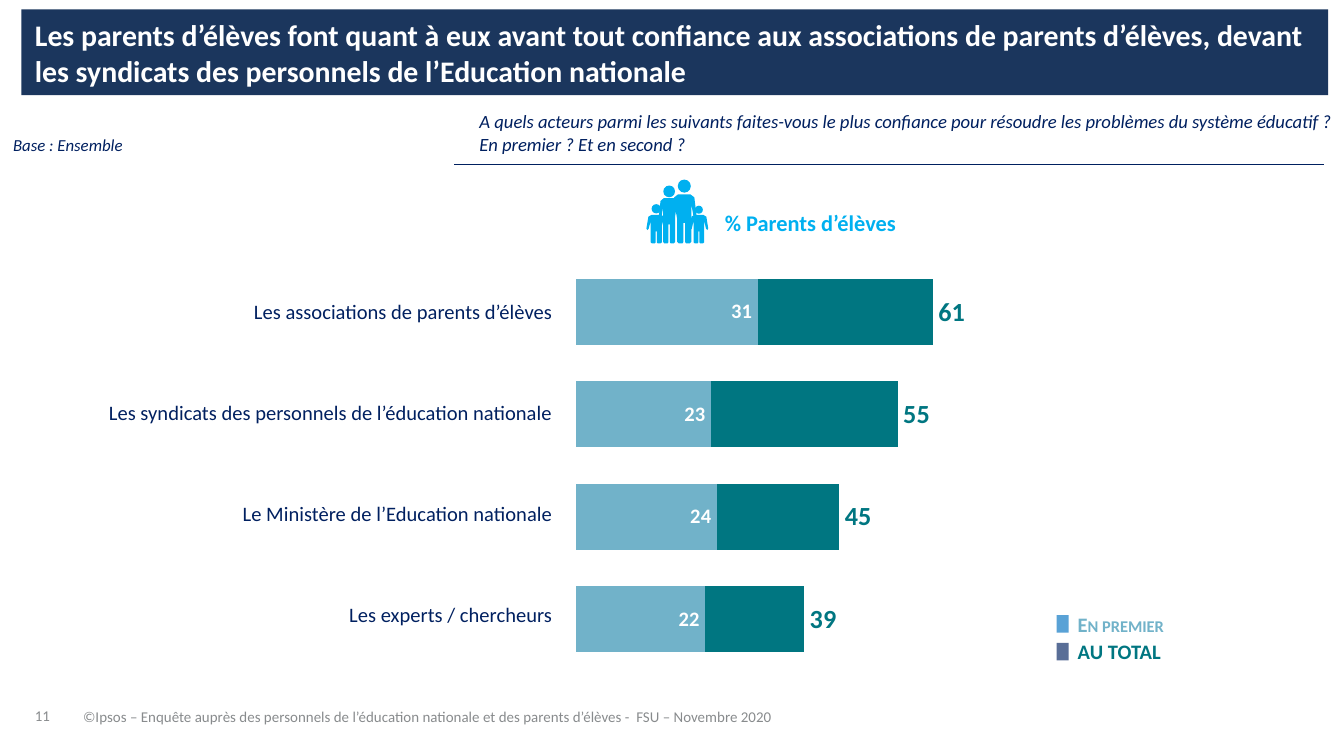
from dataclasses import dataclass

import pptx
import pptx.chart.data
import pptx.dml.color
import pptx.enum.chart
import pptx.enum.shapes
import pptx.enum.text
import pptx.oxml
import pptx.oxml.ns
import pptx.util
from pptx.util import Pt

RGBColor = pptx.dml.color.RGBColor
Align = pptx.enum.text.PP_ALIGN
Anchor = pptx.enum.text.MSO_ANCHOR
Preset = pptx.enum.shapes.MSO_SHAPE
LabelPosition = pptx.enum.chart.XL_LABEL_POSITION

FONT = "Calibri"
WHITE = RGBColor(0xFF, 0xFF, 0xFF)
NAVY = RGBColor(0x00, 0x20, 0x60)
BANNER = RGBColor(0x1B, 0x36, 0x5D)
GREY = RGBColor(0x88, 0x8B, 0x8D)
LIGHT_BLUE = RGBColor(0x71, 0xB2, 0xC9)
TEAL = RGBColor(0x00, 0x76, 0x81)
SKY = RGBColor(0x00, 0xB0, 0xF0)
KEY_BLUE = RGBColor(0x59, 0xA2, 0xD6)
KEY_SLATE = RGBColor(0x59, 0x6E, 0x97)

TITLE = ("Les parents d’élèves font quant à eux avant tout confiance aux associations de "
         "parents d’élèves, devant les syndicats des personnels de l’Education nationale")
QUESTION = ("A quels acteurs parmi les suivants faites-vous le plus confiance pour résoudre "
            "les problèmes du système éducatif ? En premier ? Et en second ?")
SOURCE = ("©Ipsos – Enquête auprès des personnels de l’éducation nationale et des parents "
          "d’élèves -  FSU – Novembre 2020")


@dataclass(frozen=True)
class Label:
    text: str
    box: tuple[float, float, float, float]
    size: float
    color: RGBColor
    bold: bool = False
    italic: bool = False
    small_caps: bool = False
    inset: bool = True
    align: Align = Align.LEFT
    anchor: Anchor = Anchor.TOP
    line_spacing: float = 1.0


@dataclass(frozen=True)
class Actor:
    name: str
    first: int
    second: int
    total: int


@dataclass(frozen=True)
class LegendKey:
    text: str
    top: float
    key_color: RGBColor
    text_color: RGBColor
    small_caps: bool


@dataclass(frozen=True)
class Person:
    center: float
    head_top: float
    head_size: float
    shoulder: float
    width: float


ACTORS = [
    Actor("Les associations de parents d’élèves", 31, 30, 61),
    Actor("Les syndicats des personnels de l’éducation nationale", 23, 32, 55),
    Actor("Le Ministère de l’Education nationale", 24, 21, 45),
    Actor("Les experts / chercheurs", 22, 17, 39),
]
LABELS = [
    Label("11", (18.7, 369.4, 24.5, 18.7), 8, GREY, inset=False, anchor=Anchor.BOTTOM,
          line_spacing=0.85),
    Label(SOURCE, (37.4, 373, 502.6, 21.6), 8, GREY, anchor=Anchor.MIDDLE),
    Label(QUESTION, (249.8, 53.3, 476, 35.3), 10, NAVY, italic=True, anchor=Anchor.MIDDLE),
    Label("Base : Ensemble", (7, 72, 85, 10.8), 9, NAVY, italic=True, inset=False),
    Label("% Parents d’élèves", (369.4, 108.7, 129.6, 21.6), 12, SKY, bold=True,
          align=Align.CENTER),
]
LEGEND = [
    LegendKey("En premier", 327.6, KEY_BLUE, LIGHT_BLUE, True),
    LegendKey("AU TOTAL", 342.5, KEY_SLATE, TEAL, False),
]
FAMILY = [
    Person(366.6, 96.2, 7, 104.2, 13.5),
    Person(358.5, 99.4, 6.3, 106.2, 11.5),
    Person(351.6, 109.4, 5, 115.2, 10.6),
    Person(374.4, 110.2, 4.3, 115.2, 10),
]
FEET = 130.4
# Right half of a standing body: share of its width from the axis, share of its height
HALF_BODY = [(0.25, 0), (0.4, 0.06), (0.5, 0.48), (0.45, 0.53), (0.38, 0.48), (0.28, 0.2),
             (0.28, 0.97), (0.22, 1), (0.07, 1), (0.03, 0.97), (0.03, 0.58)]


def style_font(font, size: float, color: RGBColor, bold: bool = False,
               italic: bool = False) -> None:
    font.name, font.size, font.bold, font.italic = FONT, Pt(size), bold, italic
    font.color.rgb = color


def add_label(slide, label: Label) -> None:
    frame = slide.shapes.add_textbox(*map(Pt, label.box)).text_frame
    frame.word_wrap = True
    frame.vertical_anchor = label.anchor
    if not label.inset:
        frame.margin_left = frame.margin_right = frame.margin_top = frame.margin_bottom = 0
    paragraph = frame.paragraphs[0]
    paragraph.text = label.text
    paragraph.alignment = label.align
    paragraph.line_spacing = label.line_spacing
    style_font(paragraph.font, label.size, label.color, label.bold, label.italic)
    if label.small_caps:
        paragraph.font._element.set("cap", "small")


def paint(shape, color: RGBColor) -> None:
    shape.shadow.inherit = False
    shape.fill.solid()
    shape.fill.fore_color.rgb = color
    shape.line.fill.background()


def add_title(slide) -> None:
    title = slide.shapes.title
    title.left, title.top, title.width, title.height = map(Pt, (11.5, 5, 700, 46))
    title.fill.solid()
    title.fill.fore_color.rgb = BANNER
    title.text_frame.vertical_anchor = Anchor.MIDDLE
    title.text_frame.auto_size = pptx.enum.text.MSO_AUTO_SIZE.NONE
    paragraph = title.text_frame.paragraphs[0]
    paragraph.text = TITLE
    paragraph.alignment = Align.LEFT
    style_font(paragraph.font, 16, WHITE, bold=True)


def add_rule(slide) -> None:
    rule = slide.shapes.add_connector(pptx.enum.shapes.MSO_CONNECTOR.STRAIGHT,
                                      Pt(243.4), Pt(88), Pt(709.2), Pt(88))
    rule.line.color.rgb = NAVY
    rule.line.width = Pt(0.5)
    rule._element.spPr.append(pptx.oxml.parse_xml(
        f'<a:effectLst {pptx.oxml.ns.nsdecls("a")}/>'))


def add_actor_table(slide) -> None:
    table = slide.shapes.add_table(len(ACTORS), 1, Pt(21.6), Pt(139.7), Pt(275),
                                   Pt(216.8)).table
    table.first_row = table.horz_banding = False
    for row, actor in enumerate(ACTORS):
        cell = table.cell(row, 0)
        cell.fill.background()
        cell.vertical_anchor = Anchor.MIDDLE
        cell.margin_left = cell.margin_right = cell.margin_top = Pt(0.7)
        cell.margin_bottom = 0
        paragraph = cell.text_frame.paragraphs[0]
        paragraph.text = actor.name
        paragraph.alignment = Align.RIGHT
        style_font(paragraph.font, 11, NAVY)


def label_series(series, position: LabelPosition, size: float, color: RGBColor) -> None:
    labels = series.data_labels
    labels.show_value = True
    labels.position = position
    style_font(labels.font, size, color, bold=True)


def add_trust_chart(slide) -> None:
    data = pptx.chart.data.CategoryChartData()
    data.categories = [actor.name for actor in ACTORS]
    data.add_series("En premier", [actor.first for actor in ACTORS])
    data.add_series("En second", [actor.second for actor in ACTORS])
    data.add_series("Au total", [actor.total for actor in ACTORS])
    chart = slide.shapes.add_chart(pptx.enum.chart.XL_CHART_TYPE.BAR_STACKED, Pt(303.8),
                                   Pt(139.7), Pt(252), Pt(244), data).chart
    chart.has_legend = chart.has_title = False
    chart.font.name, chart.font.size = FONT, Pt(18)
    chart.category_axis.reverse_order = True
    axis = chart.value_axis
    axis.minimum_scale, axis.maximum_scale, axis.major_unit = 0, 70, 5
    axis.has_major_gridlines = False
    chart.category_axis.visible = axis.visible = False
    plot = chart.plots[0]
    plot.gap_width, plot.overlap, plot.vary_by_categories = 55, 100, False
    first, second, total = plot.series
    for series, color in ((first, LIGHT_BLUE), (second, TEAL)):
        series.format.fill.solid()
        series.format.fill.fore_color.rgb = color
    total.format.fill.background()
    label_series(first, LabelPosition.INSIDE_END, 11, WHITE)
    label_series(total, LabelPosition.INSIDE_BASE, 14, TEAL)
    set_plot_area(chart, x=0.02, y=0, w=0.87, h=0.9)


def set_plot_area(chart, **shares: float) -> None:
    """Fix the inner plot area as shares of the chart's width and height."""
    area = chart._chartSpace.chart.plotArea
    for layout in area.findall(pptx.oxml.ns.qn("c:layout")):
        area.remove(layout)
    sizes = "".join(f'<c:{name} val="{share}"/>' for name, share in shares.items())
    area.insert(0, pptx.oxml.parse_xml(
        f'<c:layout {pptx.oxml.ns.nsdecls("c")}><c:manualLayout><c:layoutTarget val="inner"/>'
        f'<c:xMode val="edge"/><c:yMode val="edge"/>{sizes}</c:manualLayout></c:layout>'))


def add_legend_key(slide, key: LegendKey) -> None:
    square = slide.shapes.add_shape(Preset.RECTANGLE, Pt(566), Pt(key.top + 2), Pt(6.5), Pt(9.4))
    paint(square, key.key_color)
    add_label(slide, Label(key.text, (577.4, key.top, 67.7, 13.7), 11, key.text_color, bold=True,
                           small_caps=key.small_caps, inset=False))


def add_person(slide, person: Person) -> None:
    outline = HALF_BODY + [(-x, y) for x, y in reversed(HALF_BODY)]
    height = FEET - person.shoulder
    points = [(Pt(person.center + x * person.width), Pt(person.shoulder + y * height))
              for x, y in outline]
    builder = slide.shapes.build_freeform(*points[0], scale=1.0)
    builder.add_line_segments(points[1:], close=True)
    paint(builder.convert_to_shape(), SKY)
    head = slide.shapes.add_shape(Preset.OVAL, Pt(person.center - person.head_size / 2),
                                  Pt(person.head_top), Pt(person.head_size), Pt(person.head_size))
    paint(head, SKY)


def main() -> None:
    presentation = pptx.Presentation()
    presentation.slide_width, presentation.slide_height = Pt(720), Pt(405)
    slide = presentation.slides.add_slide(presentation.slide_layouts[5])
    add_title(slide)
    add_rule(slide)
    add_trust_chart(slide)
    add_actor_table(slide)
    for key in LEGEND:
        add_legend_key(slide, key)
    for person in FAMILY:
        add_person(slide, person)
    for label in LABELS:
        add_label(slide, label)
    presentation.save("out.pptx")


if __name__ == "__main__":
    main()
